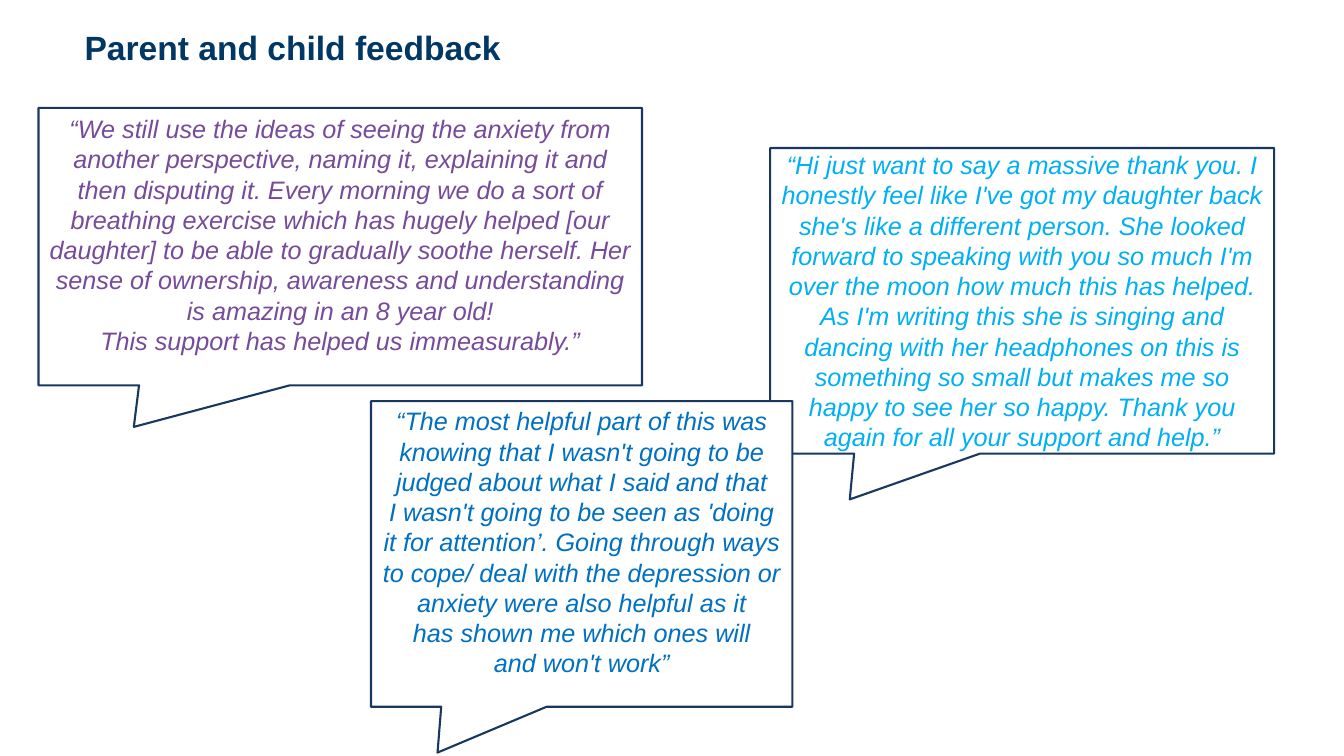
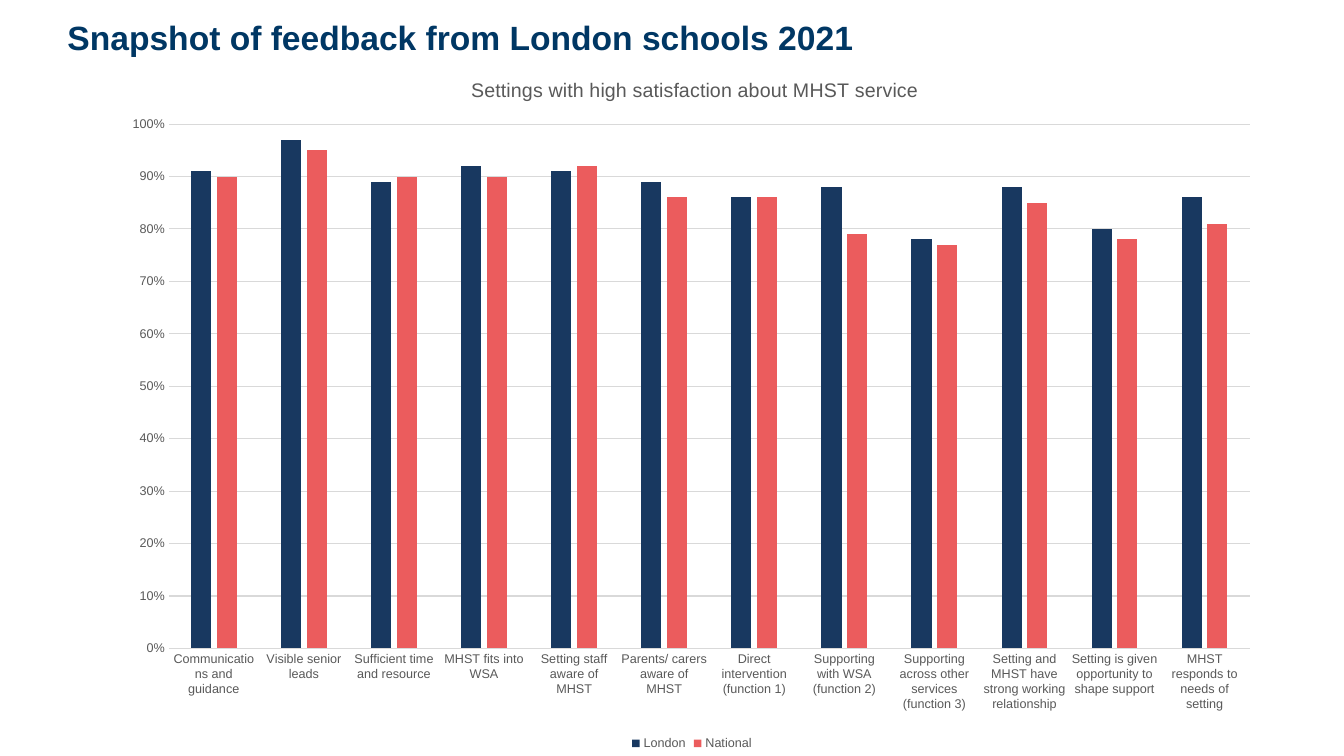
from lxml.etree import SubElement
from pptx import Presentation
from pptx.chart.data import CategoryChartData
from pptx.dml.color import RGBColor
from pptx.enum.chart import XL_CHART_TYPE as ChartType
from pptx.enum.chart import XL_LEGEND_POSITION as LegendPosition
from pptx.enum.chart import XL_TICK_MARK as TickMark
from pptx.enum.shapes import MSO_SHAPE as Shape
from pptx.enum.text import MSO_ANCHOR as Anchor
from pptx.enum.text import PP_ALIGN as Align
from pptx.oxml.ns import qn
from pptx.util import Cm, Pt

FONT = "Arial"
TITLE_BLUE = RGBColor(0x00, 0x37, 0x64)
NAVY = RGBColor(0x18, 0x38, 0x60)
CORAL = RGBColor(0xEB, 0x5C, 0x5D)
SKY = RGBColor(0x00, 0xB0, 0xF0)
BLUE = RGBColor(0x00, 0x70, 0xC0)
PURPLE = RGBColor(0x77, 0x4B, 0x99)
GREY = RGBColor(0x59, 0x59, 0x59)
LIGHT_GREY = RGBColor(0xD9, 0xD9, 0xD9)
WHITE = RGBColor(0xFF, 0xFF, 0xFF)

HARD_SPACE = chr(160)  # written as ~ in the quotes
TITLE_SIZE = (29.62, 1.42)
POINTER = (-0.342, 0.65)

FEEDBACK_TITLE = ("Parent and child feedback", 2.13, 0.79)
SNAPSHOT_TITLE = ("Snapshot of feedback from London schools 2021", 1.7, 0.53)

# Each quote: box (left, top, width, height), bottom inset, colour, paragraphs
QUOTES = [
    ((19.41, 3.73, 12.7, 7.7), 0.13, SKY, [
        "“Hi just want to say a massive thank you. I honestly feel like I've got "
        "my daughter back she's like a different person. She looked forward to "
        "speaking with you so much I'm over the moon how much this has helped. "
        "As I'm writing this she is singing and dancing with her headphones on "
        "this is something so small but makes me so happy to see her so happy. "
        "Thank you again for all your support and help.”",
    ]),
    ((9.35, 10.11, 10.62, 7.7), 0.74, BLUE, [
        "“The most helpful part of this was knowing that I~wasn't~going to be "
        "judged about what I said and that I~wasn't~going to be seen~as 'doing "
        "it for attention’. Going through ways to cope/ deal with the depression "
        "or anxiety were also helpful as~it has~shown~me which ones will "
        "and~won't~work”",
    ]),
    ((0.97, 2.72, 15.21, 6.99), 0.74, PURPLE, [
        "“We still use the ideas of seeing the anxiety from another perspective, "
        "naming it, explaining it and then disputing it. Every morning we do a "
        "sort of breathing exercise which has hugely helped [our daughter] to be "
        "able to gradually soothe herself. Her sense of ownership, awareness and "
        "understanding is amazing in an 8 year old!",
        "This support has helped us immeasurably.”",
    ]),
]

CHART_TITLE = "Settings with high satisfaction about MHST service"
CHART_BOX = (2.79, 1.24, 29.29, 17.81)
SERIES = [("London", NAVY), ("National", CORAL)]
SATISFACTION = [
    ("Communications and guidance", 0.91, 0.90),
    ("Visible senior leads", 0.97, 0.95),
    ("Sufficient time and resource", 0.89, 0.90),
    ("MHST fits into WSA", 0.92, 0.90),
    ("Setting staff aware of MHST", 0.91, 0.92),
    ("Parents/ carers aware of MHST", 0.89, 0.86),
    ("Direct intervention (function 1)", 0.86, 0.86),
    ("Supporting with WSA (function 2)", 0.88, 0.79),
    ("Supporting across other services (function 3)", 0.78, 0.77),
    ("Setting and MHST have strong working relationship", 0.88, 0.85),
    ("Setting is given opportunity to shape support", 0.80, 0.78),
    ("MHST responds to needs of setting", 0.86, 0.81),
]


def style_font(font, size, color, bold=False, italic=False):
    font.name = FONT
    font.size = Pt(size)
    font.color.rgb = color
    font.bold = bold
    font.italic = italic


def add_titled_slide(presentation, text, left, top):
    slide = presentation.slides.add_slide(presentation.slide_layouts[5])
    title = slide.shapes.title
    title.left, title.top = Cm(left), Cm(top)
    title.width, title.height = (Cm(length) for length in TITLE_SIZE)
    frame = title.text_frame
    frame.margin_left = frame.margin_right = 0
    frame.margin_top = frame.margin_bottom = 0
    frame.vertical_anchor = Anchor.TOP
    paragraph = frame.paragraphs[0]
    paragraph.alignment = Align.LEFT
    paragraph.line_spacing = 0.9
    run = paragraph.add_run()
    run.text = text
    style_font(run.font, 24, TITLE_BLUE, bold=True)
    return slide


def add_quote(slide, box, bottom_inset, color, texts):
    callout = slide.shapes.add_shape(
        Shape.RECTANGULAR_CALLOUT, *(Cm(length) for length in box))
    callout.shadow.inherit = False
    callout.adjustments[0], callout.adjustments[1] = POINTER
    callout.fill.solid()
    callout.fill.fore_color.rgb = WHITE
    callout.line.color.rgb = NAVY
    callout.line.width = Pt(1.5)
    frame = callout.text_frame
    frame.word_wrap = True
    frame.vertical_anchor = Anchor.MIDDLE
    frame.margin_bottom = Cm(bottom_inset)
    for index, text in enumerate(texts):
        paragraph = frame.add_paragraph() if index else frame.paragraphs[0]
        paragraph.alignment = Align.CENTER
        run = paragraph.add_run()
        run.text = text.replace("~", HARD_SPACE)
        style_font(run.font, 18, color, italic=True)


def place_chart_part(part, after, **fractions):
    """Fix a chart part by fractions of the chart; its layout follows the tag after."""
    for old in part.findall(qn("c:layout")):
        part.remove(old)
    layout = SubElement(part, qn("c:layout"))
    previous = part.find(qn(after)) if after else None
    part.insert(0 if previous is None else part.index(previous) + 1, layout)
    manual = SubElement(layout, qn("c:manualLayout"))
    settings = {"xMode": "edge", "yMode": "edge", **fractions}
    if "w" in fractions:
        settings = {"layoutTarget": "inner", **settings}
    for name, value in settings.items():
        SubElement(manual, qn(f"c:{name}")).set("val", str(value))


def style_axes(chart):
    for axis in (chart.category_axis, chart.value_axis):
        axis.major_tick_mark = axis.minor_tick_mark = TickMark.NONE
        style_font(axis.tick_labels.font, 9, GREY)
    category_line = chart.category_axis.format.line
    value_axis = chart.value_axis
    value_axis.has_major_gridlines = True
    for line in (category_line, value_axis.major_gridlines.format.line):
        line.color.rgb = LIGHT_GREY
        line.width = Pt(0.75)
    value_axis.format.line.fill.background()
    value_axis.minimum_scale = 0
    value_axis.maximum_scale = 1
    value_axis.major_unit = 0.1
    value_axis.tick_labels.number_format = "0%"
    value_axis.tick_labels.number_format_is_linked = False


def add_satisfaction_chart(slide):
    categories, *columns = zip(*SATISFACTION)
    data = CategoryChartData(number_format="0%")
    data.categories = categories
    for (name, _), values in zip(SERIES, columns):
        data.add_series(name, values)
    chart = slide.shapes.add_chart(
        ChartType.COLUMN_CLUSTERED, *(Cm(length) for length in CHART_BOX), data).chart
    chart.font.name = FONT
    chart.font.size = Pt(10)

    plot = chart.plots[0]
    plot.gap_width = 219
    plot.overlap = -27
    plot.vary_by_categories = False
    for series, (_, color) in zip(plot.series, SERIES):
        series.format.fill.solid()
        series.format.fill.fore_color.rgb = color
    style_axes(chart)
    place_chart_part(chart.element.find(".//" + qn("c:plotArea")), None,
                     x=0.05, y=0.106, w=0.93, h=0.742)

    chart.has_title = True
    run = chart.chart_title.text_frame.paragraphs[0].add_run()
    run.text = CHART_TITLE
    style_font(run.font, 14, GREY)
    place_chart_part(chart.element.find(".//" + qn("c:title")), "c:tx",
                     x=0.307, y=0.035)

    chart.has_legend = True
    chart.legend.position = LegendPosition.BOTTOM
    chart.legend.include_in_layout = False
    style_font(chart.legend.font, 9, GREY)
    place_chart_part(chart.element.find(".//" + qn("c:legend")), "c:legendPos",
                     x=0.445, y=0.97)


def main():
    presentation = Presentation()
    presentation.slide_width, presentation.slide_height = Cm(33.87), Cm(19.05)
    feedback = add_titled_slide(presentation, *FEEDBACK_TITLE)
    for quote in QUOTES:
        add_quote(feedback, *quote)
    snapshot = add_titled_slide(presentation, *SNAPSHOT_TITLE)
    add_satisfaction_chart(snapshot)
    presentation.save("out.pptx")


if __name__ == "__main__":
    main()
